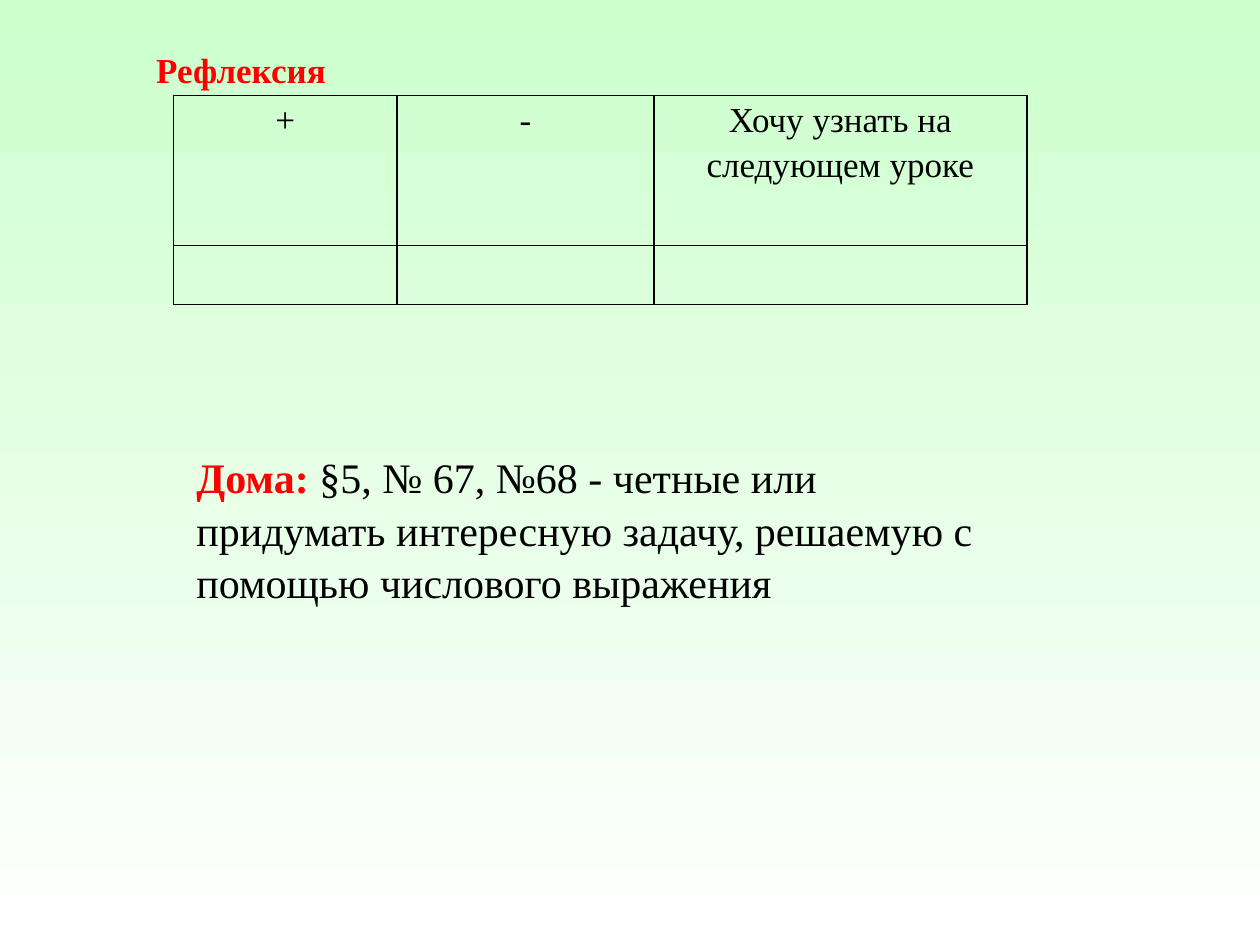
from lxml import etree
from pptx import Presentation
from pptx.dml.color import RGBColor
from pptx.enum.text import PP_ALIGN
from pptx.oxml.ns import qn
from pptx.util import Cm, Pt

CENTER = PP_ALIGN.CENTER
FACE = "Times New Roman"
COLORS = {"ink": "000000", "red": "FF0000", "mint": "CCFFCC", "white": "FFFFFF"}


def style(font, size, color, bold=False):
    font.name, font.size, font.bold = FACE, Pt(size), bold
    font.color.rgb = RGBColor.from_string(COLORS[color])


def add_box(left, top, width, height):
    frame = slide.shapes.add_textbox(Cm(left), Cm(top), Cm(width), Cm(height)).text_frame
    frame.word_wrap = True
    return frame


deck = Presentation()
deck.slide_width, deck.slide_height = Cm(25.4), Cm(19.05)
slide = deck.slides.add_slide(deck.slide_layouts[6])

# Background: mint at the top fading to white
fill = slide.background.fill
fill.gradient()
fill.gradient_angle = 270
for stop, name, place in zip(fill.gradient_stops, ("mint", "white"), (0, 1)):
    stop.color.rgb = RGBColor.from_string(COLORS[name])
    stop.position = place

# Reflection table
heads = ["+", "-", "Хочу узнать на следующем уроке"]
widths = [4.5, 5.18, 7.52]
heights = [3.02, 1.19]
table = slide.shapes.add_table(
    2, 3, Cm(3.5), Cm(1.93), Cm(sum(widths)), Cm(sum(heights))).table
table.first_row = table.horz_banding = False
for col, width in zip(table.columns, widths):
    col.width = Cm(width)
for row, height in zip(table.rows, heights):
    row.height = Cm(height)

# Cell borders come before the fill in the cell properties
for cell in table.iter_cells():
    props = cell._tc.get_or_add_tcPr()
    for side in ("a:lnL", "a:lnR", "a:lnT", "a:lnB"):
        line = etree.SubElement(props, qn(side), w=str(Pt(1)))
        solid = etree.SubElement(line, qn("a:solidFill"))
        etree.SubElement(solid, qn("a:srgbClr"), val=COLORS["ink"])
    cell.fill.background()

# Column heads
for cell, head in zip(table.rows[0].cells, heads):
    cell.margin_left = cell.margin_right = Cm(0.18)
    cell.margin_top = cell.margin_bottom = 0
    para = cell.text_frame.paragraphs[0]
    para.text = head
    para.alignment = CENTER
    para.line_spacing = 1.15
    style(para.font, 20, "ink")

# Title
title = add_box(2.9, 0.86, 5.69, 1.07).paragraphs[0]
title.text = "Рефлексия"
style(title.font, 20, "red", True)

# Homework
home = add_box(3.71, 8.92, 17.81, 3.33)
task = home.paragraphs[0]
for text, color, bold in [("Дома: ", "red", True),
                          ("§5, № 67, №68 - четные или", "ink", False)]:
    run = task.add_run()
    run.text = text
    style(run.font, 24, color, bold)
other = home.add_paragraph()
other.text = "придумать интересную задачу, решаемую с помощью числового выражения"
style(other.font, 24, "ink")
for para in home.paragraphs:
    para.line_spacing = 1.05

deck.save("out.pptx")
